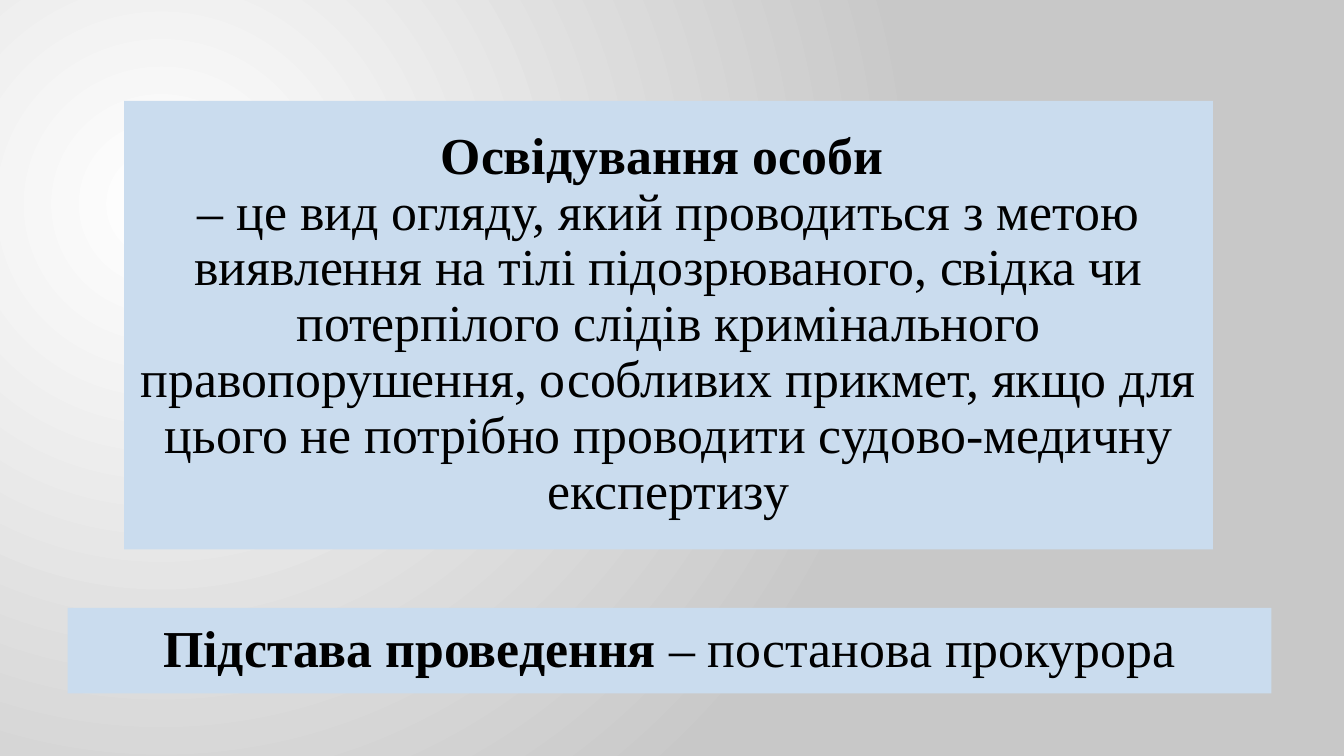
from dataclasses import dataclass

from lxml import etree
from pptx import Presentation
from pptx.dml.color import RGBColor
from pptx.enum import shapes, text
from pptx.oxml import ns
from pptx.util import Inches, Pt

COLORS = {"panel": "CADCEE", "ink": "000000", "glow": "FFFFFF", "edge": "C8C8C8"}


@dataclass
class Panel:
    left: float
    top: float
    width: float
    height: float
    term: str
    explanation: str
    is_title: bool = False
    break_after_term: bool = False


PANELS = [
    Panel(0.67, 6.03, 11.94, 0.85, "Підстава проведення", " – постанова прокурора"),
    Panel(
        1.23, 1, 10.8, 4.45, "Освідування особи ",
        "– це вид огляду, який проводиться з метою виявлення на тілі "
        "підозрюваного, свідка чи потерпілого слідів кримінального "
        "правопорушення, особливих прикмет, якщо для цього не потрібно "
        "проводити судово-медичну експертизу",
        is_title=True, break_after_term=True,
    ),
]


def rgb(name: str) -> RGBColor:
    return RGBColor.from_string(COLORS[name])


def paint_background(slide) -> None:
    """Fill the background with a circular gradient glowing at the upper left."""
    fill = slide.background.fill
    fill.gradient()
    for stop, name in zip(fill.gradient_stops, ("glow", "edge")):
        stop.color.rgb = rgb(name)
    gradient = slide._element.find(".//" + ns.qn("a:gradFill"))
    gradient.remove(gradient.find(ns.qn("a:lin")))
    circle = etree.SubElement(gradient, ns.qn("a:path"), path="circle")
    etree.SubElement(circle, ns.qn("a:fillToRect"),
                     l="50000", t="55000", r="125000", b="100000")


def add_text(paragraph, content: str, *, bold: bool = False, size: float = 37,
             face: str = "Times New Roman", color: str = "ink") -> None:
    run = paragraph.add_run()
    run.text = content
    run.font.name = face
    run.font.size = Pt(size)
    run.font.bold = bold
    run.font.color.rgb = rgb(color)


def draw_panel(slide, panel: Panel) -> None:
    box = [Inches(v) for v in (panel.left, panel.top, panel.width, panel.height)]
    if panel.is_title:
        block = slide.shapes.title
        block.left, block.top, block.width, block.height = box
    else:
        block = slide.shapes.add_shape(shapes.MSO_SHAPE.RECTANGLE, *box)
        block.shadow.inherit = False
    block.fill.solid()
    block.fill.fore_color.rgb = rgb("panel")
    block.line.fill.background()

    frame = block.text_frame
    frame.word_wrap = True
    frame.auto_size = text.MSO_AUTO_SIZE.NONE
    frame.vertical_anchor = text.MSO_ANCHOR.MIDDLE
    frame.margin_left = frame.margin_right = Inches(0.15)
    frame.margin_top = frame.margin_bottom = Inches(0.15)

    paragraph = frame.paragraphs[0]
    paragraph.alignment = text.PP_ALIGN.CENTER
    paragraph.line_spacing = 0.9
    add_text(paragraph, panel.term, bold=True)
    if panel.break_after_term:
        paragraph.add_line_break()
    add_text(paragraph, panel.explanation)


def main() -> None:
    deck = Presentation()
    deck.slide_width, deck.slide_height = Inches(13.33), Inches(7.5)
    slide = deck.slides.add_slide(deck.slide_layouts.get_by_name("Title Only"))
    paint_background(slide)
    for panel in PANELS:
        draw_panel(slide, panel)
    deck.save("out.pptx")


if __name__ == "__main__":
    main()
